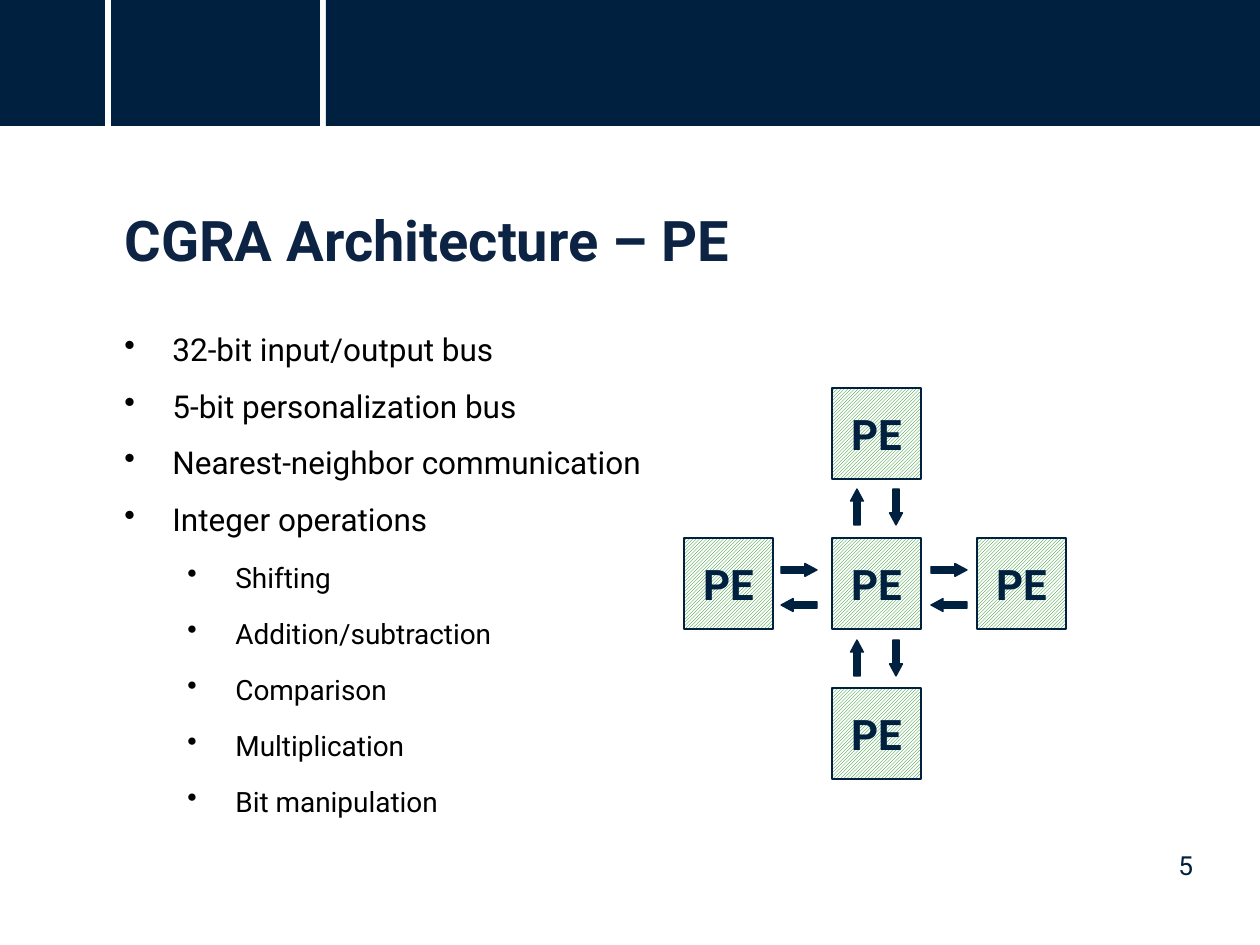
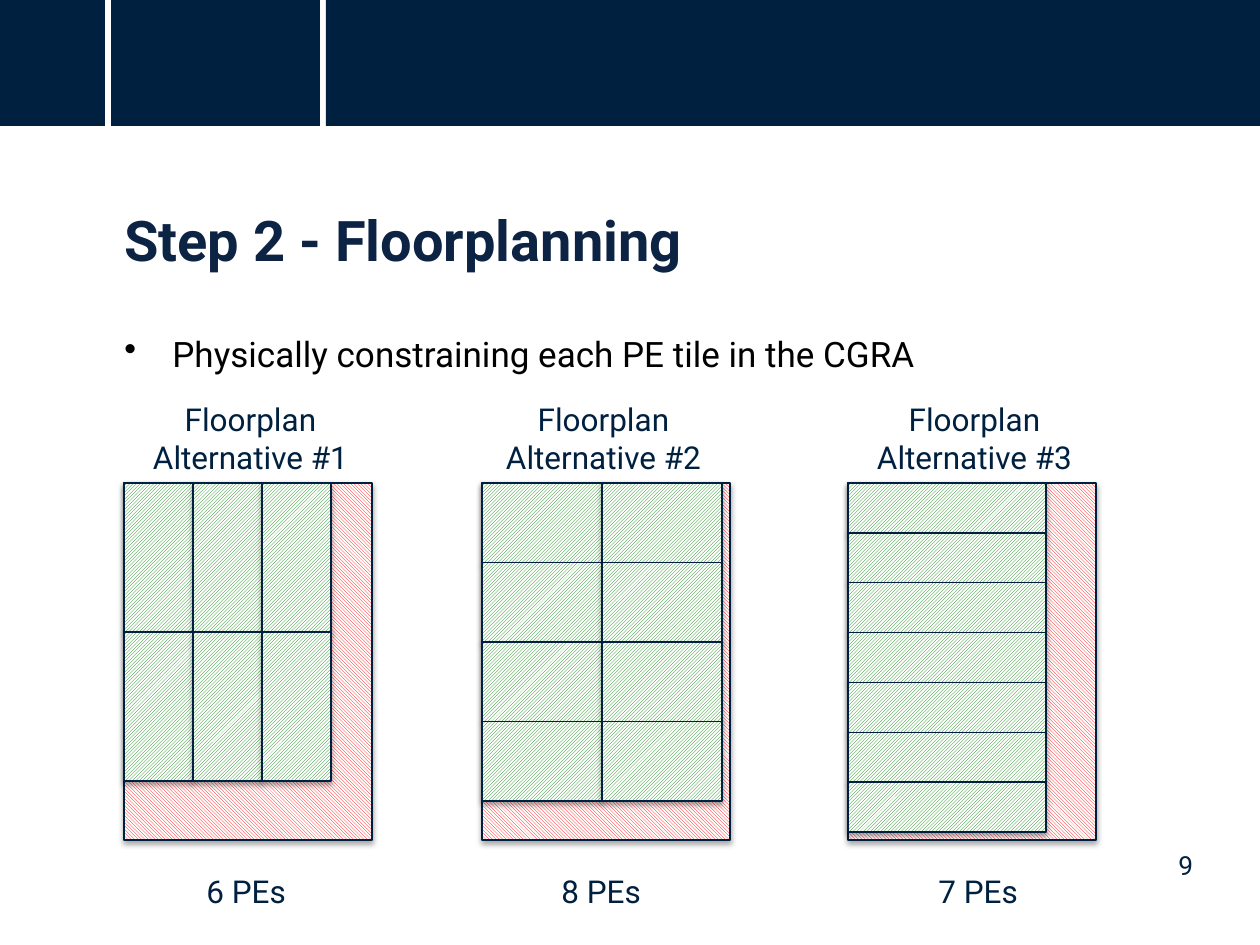
"""Build two slides about a CGRA: its processing elements and their floorplans."""
from lxml import etree
from pptx import Presentation
from pptx.dml.color import RGBColor
from pptx.enum.dml import MSO_PATTERN
from pptx.enum.shapes import MSO_SHAPE
from pptx.enum.text import MSO_ANCHOR, MSO_AUTO_SIZE, PP_ALIGN
from pptx.oxml.ns import qn
from pptx.util import Emu, Pt

RECTANGLE, ARROW = MSO_SHAPE.RECTANGLE, MSO_SHAPE.RIGHT_ARROW
UPWARD = MSO_PATTERN.LIGHT_UPWARD_DIAGONAL
DOWNWARD = MSO_PATTERN.LIGHT_DOWNWARD_DIAGONAL
LEFT, CENTER = PP_ALIGN.LEFT, PP_ALIGN.CENTER
MIDDLE = MSO_ANCHOR.MIDDLE
FIT_SHAPE = MSO_AUTO_SIZE.SHAPE_TO_FIT_TEXT

FONT = "Roboto"
COLORS = {
    "navy": "002040", "edge": "001F3F", "title": "0C2344", "black": "000000",
    "white": "FFFFFF", "green": "008000", "red": "FF0000",
}
PX = 914400 / 126
SLIDE_WIDTH, SLIDE_HEIGHT = 1260, 945

BAND_WIDTHS, BAND_HEIGHT, BAND_GAP = (105, 209, 934), 126, 6
TITLE_BOX = (112, 199, 1042, 74)
BODY_BOX = (112, 305, 1042, 586)
NUMBER_BOX = (1166, 843, 40, 44)
BULLET_INDENT, LEVEL_INDENT = 48, 63

PE_BULLETS = [
    (0, "32-bit input/output bus"),
    (0, "5-bit personalization bus"),
    (0, "Nearest-neighbor communication"),
    (0, "Integer operations"),
    (1, "Shifting"),
    (1, "Addition/subtraction"),
    (1, "Comparison"),
    (1, "Multiplication"),
    (1, "Bit manipulation"),
]
PE_SIZE = (89, 91)
PE_POSITIONS = [(832, 388), (684, 538), (832, 538), (977, 538), (832, 688)]
ARROW_LENGTH, ARROW_THICKNESS = 36, 13
HORIZONTAL_CENTERS, HORIZONTAL_LANES = (799, 949), {0: 570, 180: 605}
VERTICAL_CENTERS, VERTICAL_LANES = (507, 658), {270: 857, 90: 896}

FLOORPLAN_BULLETS = [(0, "Physically constraining each PE tile in the CGRA")]
DIE_TOP, DIE_WIDTH, DIE_HEIGHT = 483, 248, 357
CAPTION_TOP, CAPTION_WIDTH, CAPTION_HEIGHT = 394, 221, 89
COUNT_TOP, COUNT_WIDTH, COUNT_HEIGHT = 866, 111, 50
FLOORPLANS = [
    {"die": 124, "grid": (3, 2), "area": (207, 298), "edge": "navy",
     "caption": 140, "count": 194},
    {"die": 482, "grid": (2, 4), "area": (240, 318), "edge": "navy",
     "caption": 493, "count": 549},
    {"die": 848, "grid": (1, 7), "area": (198, 349), "edge": "edge",
     "caption": 864, "count": 926},
]


def px(length):
    """Turn pixels into EMU."""
    return Emu(round(length * PX))


def color(name):
    """Look up a colour."""
    return RGBColor.from_string(COLORS[name])


def add_run(paragraph, text, size, color_name="navy", bold=False):
    """Add one formatted run."""
    run = paragraph.add_run()
    run.text = text
    run.font.name = FONT
    run.font.size = Pt(size)
    run.font.bold = bold
    run.font.color.rgb = color(color_name)


def add_text(slide, box, lines, size, color_name="navy", bold=False,
             alignment=LEFT, wrap=False):
    """Add a text box with one paragraph per line."""
    frame = slide.shapes.add_textbox(*map(px, box)).text_frame
    frame.word_wrap = wrap
    if not wrap:
        frame.auto_size = FIT_SHAPE
    for index, line in enumerate(lines):
        paragraph = frame.add_paragraph() if index else frame.paragraphs[0]
        paragraph.alignment = alignment
        add_run(paragraph, line, size, color_name, bold)


def add_bullets(slide, bullets, sizes):
    """Add the bulleted body, with a text size for each level."""
    frame = slide.shapes.add_textbox(*map(px, BODY_BOX)).text_frame
    frame.word_wrap = True
    for index, (level, text) in enumerate(bullets):
        paragraph = frame.add_paragraph() if index else frame.paragraphs[0]
        paragraph.level = level
        properties = paragraph._p.get_or_add_pPr()
        properties.set("marL", str(px(BULLET_INDENT + level * LEVEL_INDENT)))
        properties.set("indent", str(-px(BULLET_INDENT)))
        etree.SubElement(properties, qn("a:buChar"), char="•")
        paragraph.line_spacing = 1.5
        if level:
            paragraph.space_before = Pt(0.2 * sizes[level])
        add_run(paragraph, text, sizes[level], "black")


def add_solid(slide, kind, box):
    """Add a navy shape without an outline."""
    shape = slide.shapes.add_shape(kind, *map(px, box))
    shape.shadow.inherit = False
    shape.fill.solid()
    shape.fill.fore_color.rgb = color("navy")
    shape.line.fill.background()
    return shape


def set_outline(shape, color_name="navy"):
    """Give a shape the thin outline."""
    shape.line.color.rgb = color(color_name)
    shape.line.width = Pt(0.75)


def add_hatched(slide, box, pattern=UPWARD, hatch="green", edge="navy"):
    """Add a hatched rectangle."""
    shape = slide.shapes.add_shape(RECTANGLE, *map(px, box))
    shape.shadow.inherit = False
    shape.fill.patterned()
    shape.fill.pattern = pattern
    shape.fill.fore_color.rgb = color(hatch)
    shape.fill.back_color.rgb = color("white")
    set_outline(shape, edge)
    return shape


def add_shadow(shape):
    """Add a soft shadow below a shape."""
    effects = shape._element.spPr.find(qn("a:effectLst"))
    shadow = etree.SubElement(effects, qn("a:outerShdw"), blurRad="40000",
                              dist="23000", dir="5400000", rotWithShape="0")
    shade = etree.SubElement(shadow, qn("a:srgbClr"), val=COLORS["black"])
    etree.SubElement(shade, qn("a:alpha"), val="35000")


def add_arrow(slide, center_x, center_y, rotation):
    """Add a block arrow around its centre."""
    arrow = add_solid(slide, ARROW, (center_x - ARROW_LENGTH / 2,
                                     center_y - ARROW_THICKNESS / 2,
                                     ARROW_LENGTH, ARROW_THICKNESS))
    arrow.adjustments[0] = 0.5
    arrow.adjustments[1] = 0.93
    arrow.rotation = rotation
    set_outline(arrow)


def add_base_slide(presentation, title, number):
    """Add a slide with the top bands, title and number."""
    slide = presentation.slides.add_slide(presentation.slide_layouts[6])
    left = 0
    for width in BAND_WIDTHS:
        add_solid(slide, RECTANGLE, (left, 0, width, BAND_HEIGHT))
        left += width + BAND_GAP
    add_text(slide, TITLE_BOX, [title], 32, "title", bold=True, wrap=True)
    add_text(slide, NUMBER_BOX, [str(number)], 15)
    return slide


def build_pe_slide(presentation):
    """Show a processing element and its neighbours."""
    slide = add_base_slide(presentation, "CGRA Architecture – PE", 5)
    add_bullets(slide, PE_BULLETS, (18, 16))
    for position in PE_POSITIONS:
        frame = add_hatched(slide, position + PE_SIZE).text_frame
        frame.vertical_anchor = MIDDLE
        frame.paragraphs[0].alignment = CENTER
        add_run(frame.paragraphs[0], "PE", 24, bold=True)
    for center_x in HORIZONTAL_CENTERS:
        for rotation, center_y in HORIZONTAL_LANES.items():
            add_arrow(slide, center_x, center_y, rotation)
    for center_y in VERTICAL_CENTERS:
        for rotation, center_x in VERTICAL_LANES.items():
            add_arrow(slide, center_x, center_y, rotation)


def build_floorplan_slide(presentation):
    """Compare three ways of tiling the die."""
    slide = add_base_slide(presentation, "Step 2 - Floorplanning", 9)
    add_bullets(slide, FLOORPLAN_BULLETS, (20,))
    for number, plan in enumerate(FLOORPLANS, 1):
        add_shadow(add_hatched(slide, (plan["die"], DIE_TOP, DIE_WIDTH, DIE_HEIGHT),
                               DOWNWARD, "red", "edge"))
        columns, rows = plan["grid"]
        width, height = plan["area"][0] / columns, plan["area"][1] / rows
        for row in range(rows):
            for column in range(columns):
                box = (plan["die"] + column * width, DIE_TOP + row * height,
                       width, height)
                add_shadow(add_hatched(slide, box, edge=plan["edge"]))
        add_text(slide, (plan["caption"], CAPTION_TOP, CAPTION_WIDTH, CAPTION_HEIGHT),
                 ["Floorplan", f"Alternative #{number}"], 18, alignment=CENTER)
        add_text(slide, (plan["count"], COUNT_TOP, COUNT_WIDTH, COUNT_HEIGHT),
                 [f"{columns * rows} PEs"], 18)


def main():
    """Build and save the presentation."""
    presentation = Presentation()
    presentation.slide_width = px(SLIDE_WIDTH)
    presentation.slide_height = px(SLIDE_HEIGHT)
    build_pe_slide(presentation)
    build_floorplan_slide(presentation)
    presentation.save("out.pptx")


if __name__ == "__main__":
    main()
